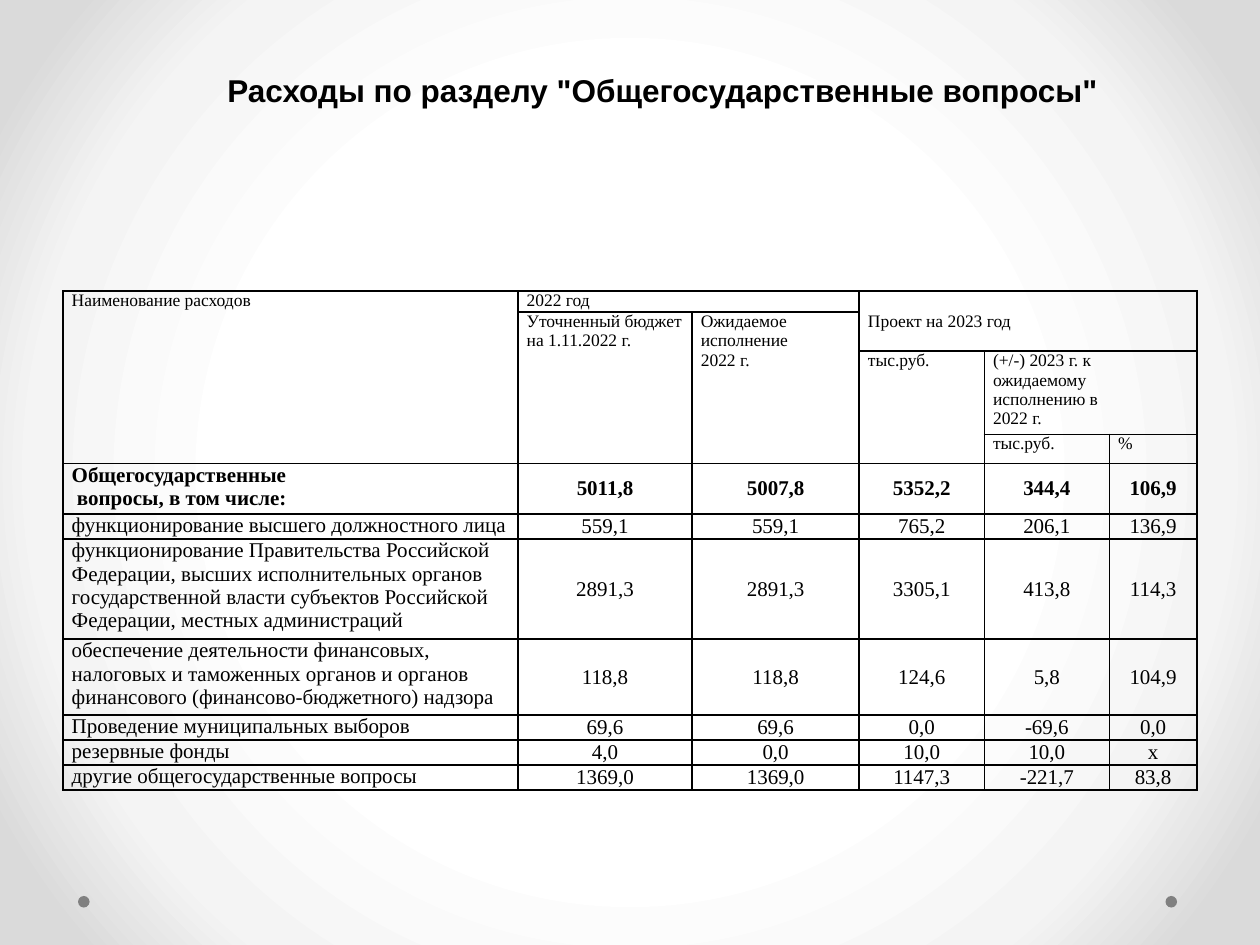
from lxml.etree import fromstring
from pptx import Presentation
from pptx.dml.color import RGBColor
from pptx.enum.shapes import MSO_SHAPE
from pptx.enum.text import MSO_ANCHOR, PP_ALIGN
from pptx.oxml.ns import nsdecls, qn
from pptx.util import Pt

BLACK = RGBColor(0x00, 0x00, 0x00)
GRAY = RGBColor(0x80, 0x80, 0x80)
BACKGROUND_STOPS = [(50, "FFFFFF"), (76, "F4F4F4"), (92, "DADADA")]

TITLE = [("\t", "TeX Gyre Pagella", 14),
         ('Расходы по разделу "Общегосударственные вопросы"', "Arial", 18)]
TABLE_FONT = "Times New Roman"

# (row, column, row span, column span, text)
HEADERS = [
    (0, 0, 4, 1, "Наименование расходов"),
    (0, 1, 1, 2, "2022 год"),
    (0, 3, 2, 3, "Проект на 2023 год"),
    (1, 1, 3, 1, "Уточненный бюджет на 1.11.2022 г."),
    (1, 2, 3, 1, "Ожидаемое\nисполнение\n2022 г."),
    (2, 3, 2, 1, "тыс.руб."),
    (2, 4, 1, 2, "(+/-) 2023 г. к ожидаемому\nисполнению в\n2022 г."),
    (3, 4, 1, 1, "тыс.руб."),
    (3, 5, 1, 1, "%"),
]
HEADER_ROWS = 4
EXPENSES = [
    ("Общегосударственные\n вопросы, в том числе:", "5011,8", "5007,8", "5352,2", "344,4", "106,9"),
    ("функционирование высшего должностного лица", "559,1", "559,1", "765,2", "206,1", "136,9"),
    ("функционирование Правительства Российской Федерации, высших исполнительных органов "
     "государственной власти субъектов Российской Федерации, местных администраций",
     "2891,3", "2891,3", "3305,1", "413,8", "114,3"),
    ("обеспечение деятельности финансовых, налоговых и таможенных органов и органов "
     "финансового (финансово-бюджетного) надзора", "118,8", "118,8", "124,6", "5,8", "104,9"),
    ("Проведение муниципальных выборов", "69,6", "69,6", "0,0", "-69,6", "0,0"),
    ("резервные фонды", "4,0", "0,0", "10,0", "10,0", "х"),
    ("другие общегосударственные вопросы", "1369,0", "1369,0", "1147,3", "-221,7", "83,8"),
]
COLUMN_WIDTHS = [260, 99.5, 95.5, 71.5, 71.5, 50]
ROW_HEIGHTS = [12, 22.4, 47.5, 16.6, 29, 14.3, 57.2, 43.4, 14.3, 14.3, 14.3]


def paint_background(page):
    fill = page.background.fill
    fill.gradient()
    stops = "".join(f'<a:gs pos="{place * 1000}"><a:srgbClr val="{color}"/></a:gs>'
                    for place, color in BACKGROUND_STOPS)
    gradient = fromstring(
        f'<a:gradFill {nsdecls("a")} rotWithShape="1"><a:gsLst>{stops}</a:gsLst>'
        '<a:path path="circle"><a:fillToRect l="50000" t="50000" r="50000" b="50000"/></a:path>'
        '</a:gradFill>')
    current = next(page.element.iter(qn("a:gradFill")))
    current.getparent().replace(current, gradient)


def format_span(span, font, size, bold):
    span.font.name = font
    span.font.size = Pt(size)
    span.font.bold = bold
    span.font.color.rgb = BLACK


def add_dot(page, left):
    dot = page.shapes.add_shape(MSO_SHAPE.OVAL, Pt(left), Pt(512), Pt(6.6), Pt(6.6))
    dot.shadow.inherit = False
    dot.fill.solid()
    dot.fill.fore_color.rgb = GRAY
    dot.line.fill.background()


def add_title(page):
    box = page.shapes.title
    box.left, box.top, box.width, box.height = Pt(36.6), Pt(21), Pt(648), Pt(45)
    box.text_frame.vertical_anchor = MSO_ANCHOR.BOTTOM
    para = box.text_frame.paragraphs[0]
    para.alignment = PP_ALIGN.CENTER
    for text, font, size in TITLE:
        span = para.add_run()
        span.text = text
        format_span(span, font, size, True)


def frame_cell(cell):
    cell.margin_left = cell.margin_right = Pt(5)
    cell.margin_top = cell.margin_bottom = 0
    cell.fill.background()
    properties = cell._tc.get_or_add_tcPr()
    for index, side in enumerate("LRTB"):
        properties.insert(index, fromstring(
            f'<a:ln{side} {nsdecls("a")} w="{Pt(1)}"><a:solidFill>'
            f'<a:srgbClr val="{BLACK}"/></a:solidFill></a:ln{side}>'))


def write_cell(cell, text, size, bold=False, centered=False):
    cell.text_frame.text = text
    for para in cell.text_frame.paragraphs:
        para.alignment = PP_ALIGN.CENTER if centered else PP_ALIGN.LEFT
        for span in para.runs:
            format_span(span, TABLE_FONT, size, bold)
    cell.vertical_anchor = MSO_ANCHOR.MIDDLE if centered else MSO_ANCHOR.TOP


def add_expense_table(page):
    table = page.shapes.add_table(
        len(ROW_HEIGHTS), len(COLUMN_WIDTHS), Pt(36), Pt(166.3),
        Pt(sum(COLUMN_WIDTHS)), Pt(sum(ROW_HEIGHTS))).table
    table.first_row = table.horz_banding = False
    for column, width in zip(table.columns, COLUMN_WIDTHS):
        column.width = Pt(width)
    for row, height in zip(table.rows, ROW_HEIGHTS):
        row.height = Pt(height)
    for cell in table.iter_cells():
        frame_cell(cell)
        cell.text_frame.paragraphs[0].font.size = Pt(10)

    for row, column, rows, columns, text in HEADERS:
        cell = table.cell(row, column)
        if rows * columns > 1:
            cell.merge(table.cell(row + rows - 1, column + columns - 1))
        write_cell(cell, text, 10)
    table.cell(0, 3).vertical_anchor = MSO_ANCHOR.MIDDLE

    for row, expense in enumerate(EXPENSES):
        for column, text in enumerate(expense):
            write_cell(table.cell(HEADER_ROWS + row, column), text, 12,
                       bold=row == 0, centered=column > 0)


def main():
    deck = Presentation()
    deck.slide_width, deck.slide_height = Pt(720), Pt(540)
    page = deck.slides.add_slide(deck.slide_layouts[5])
    paint_background(page)
    for left in (666, 44.6):
        add_dot(page, left)
    add_title(page)
    add_expense_table(page)
    deck.save("out.pptx")


if __name__ == "__main__":
    main()
